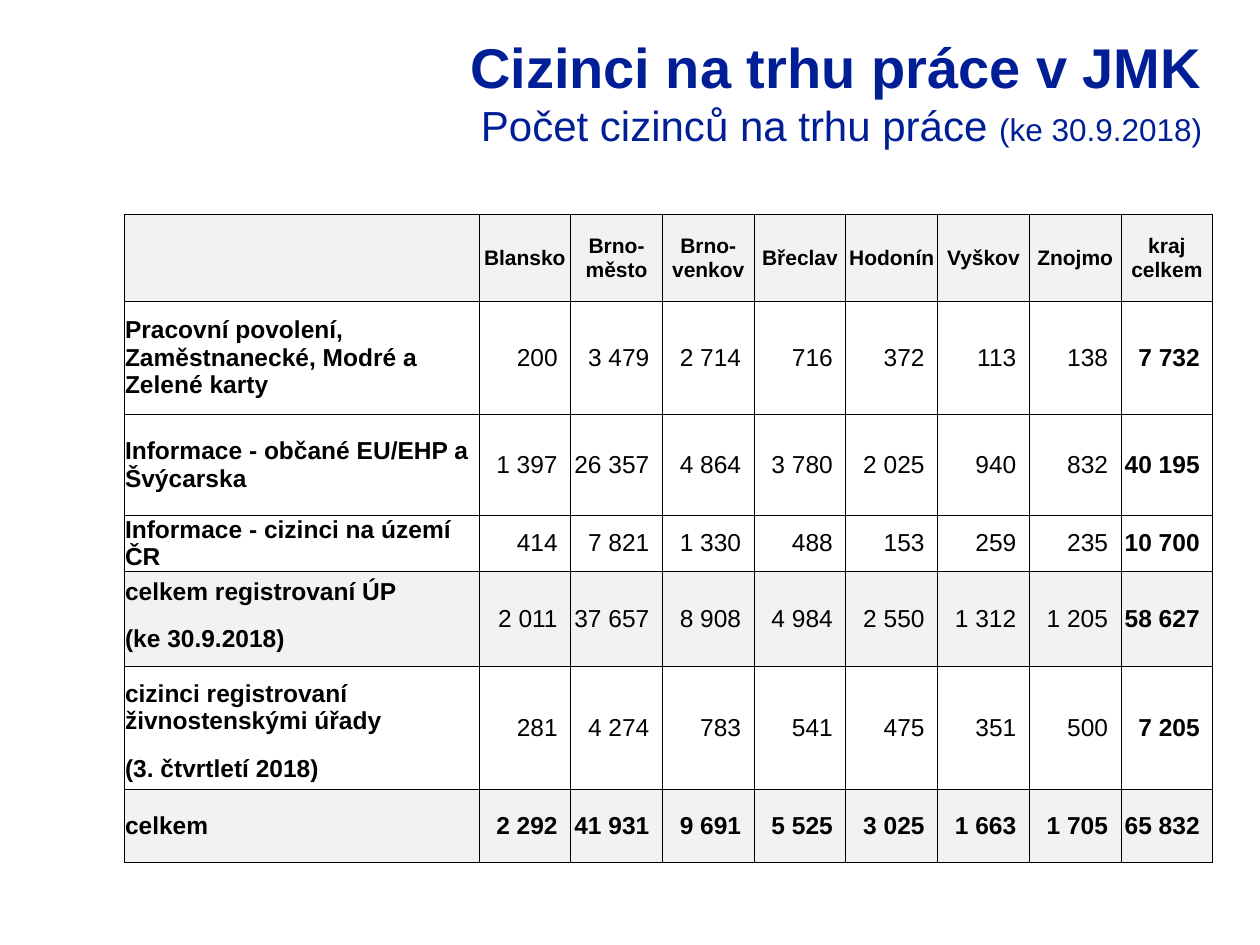
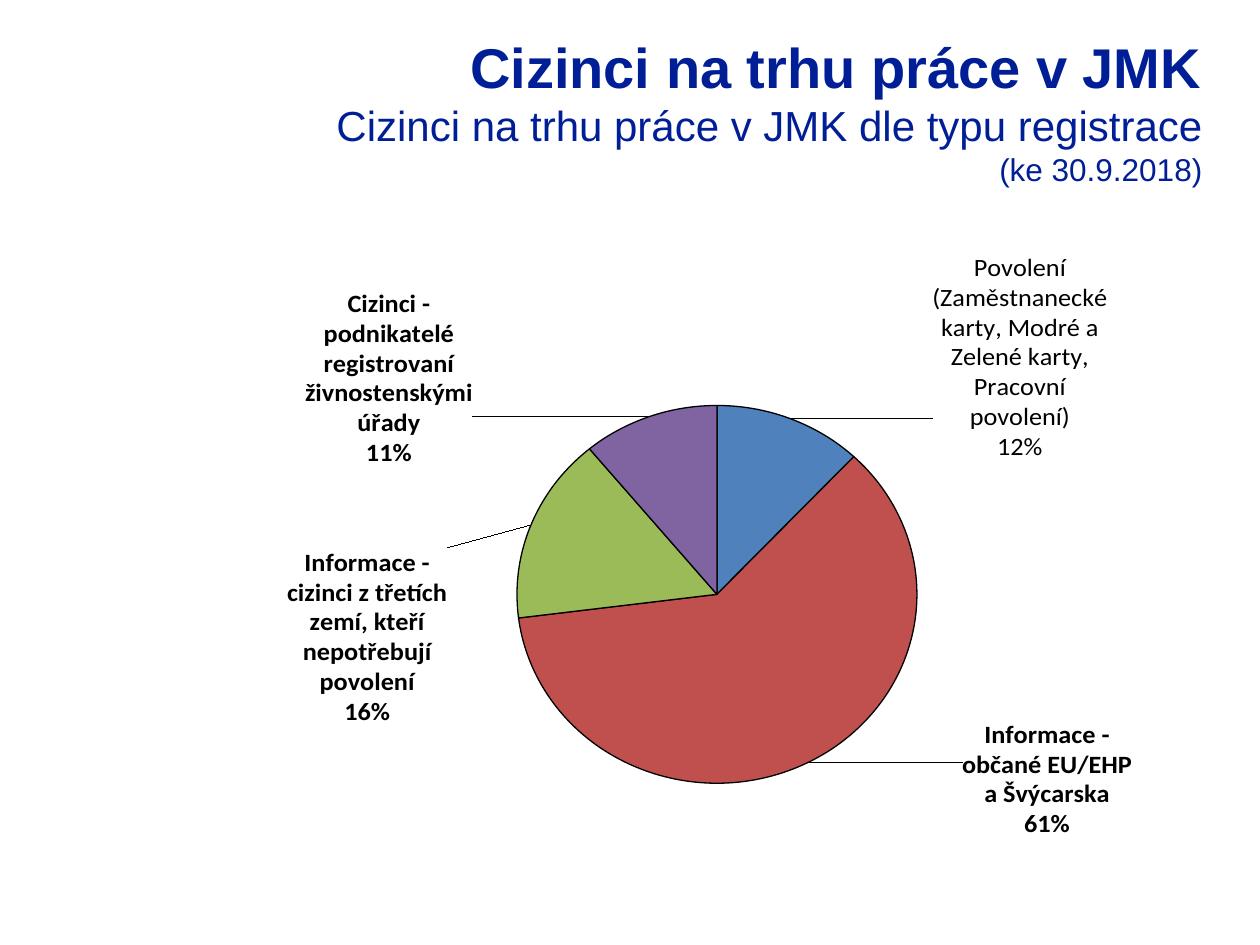
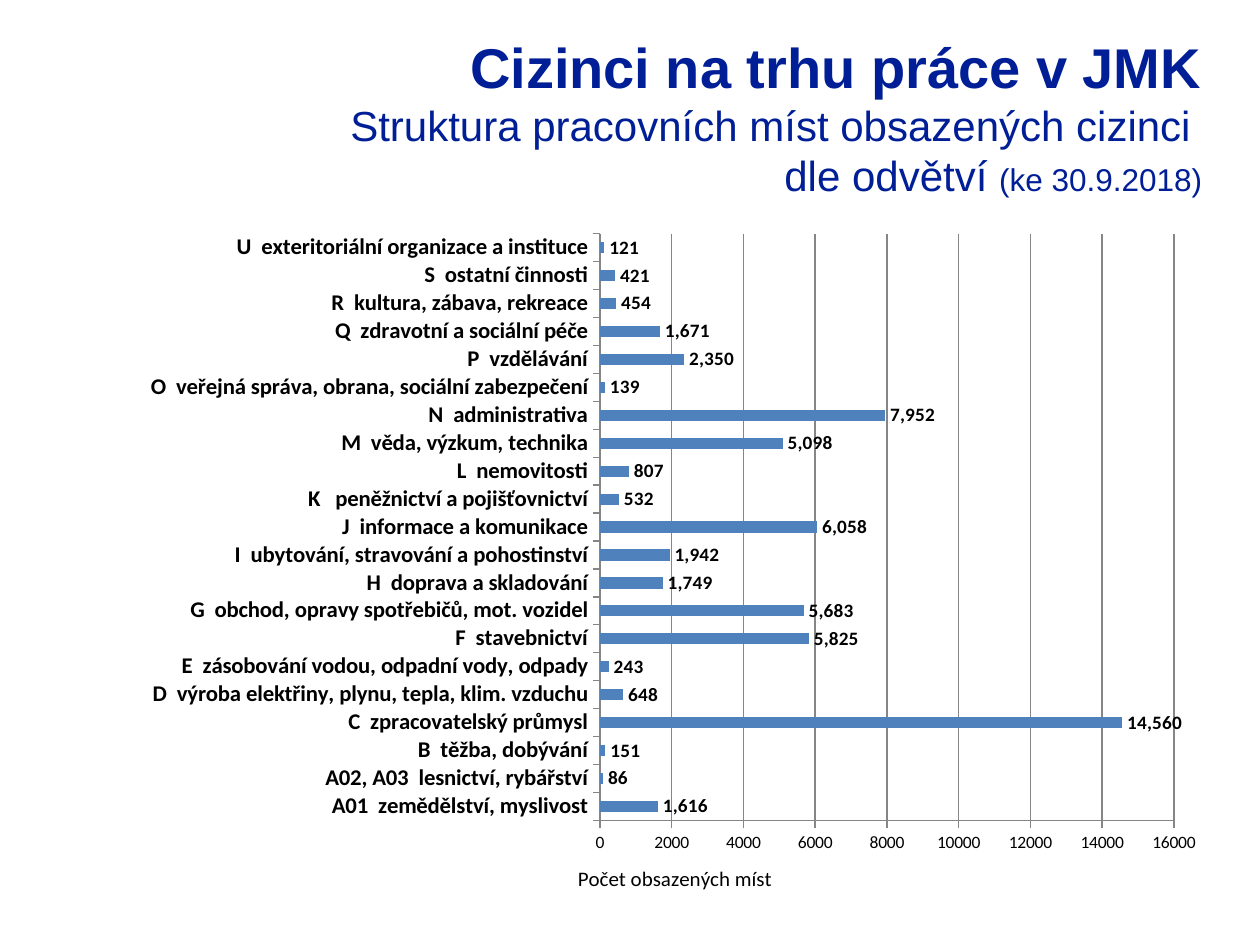
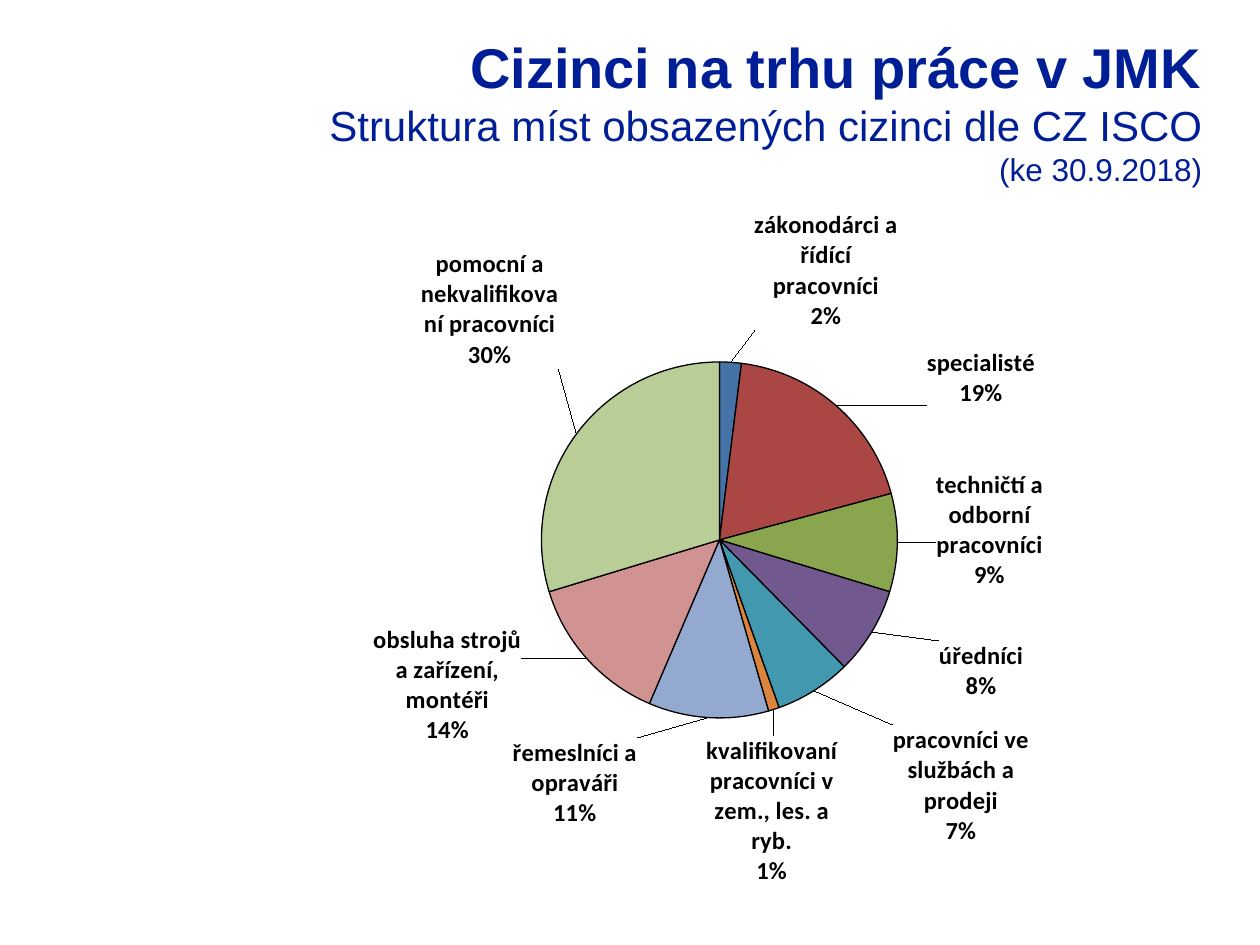
import copy

import lxml.etree
import pptx
import pptx.chart.data
import pptx.dml.color
import pptx.enum.chart
import pptx.enum.text
import pptx.oxml
import pptx.oxml.ns
import pptx.util

PX = 914400 / 126
PAGE_SIZE = (1260, 945)


class Theme:
    TITLE_FONT, CHART_FONT = "Arial", "Calibri"
    NAVY, BLACK, GRID = "001E96", "000000", "868686"
    SHADE, BAR = "F2F2F2", "4F81BD"
    HEADING, SUBTITLE, DATE = 32, 24, 18
    TABLE_HEAD, TABLE_BODY = 12, 14
    CHART, BAR_LABEL, CATEGORY, AXIS_TITLE = 10, 11, 13, 12
    REGISTRATION_LABEL, OCCUPATION_LABEL = 15, 14


HEADING = "Cizinci na trhu práce v JMK"
DATE = "(ke 30.9.2018)"
TITLE_BOX = (223, 26, 992, 189)
NARROW_TITLE_BOX = (302, 26, 913, 189)

TABLE_BOX = (124, 214, 1089, 647)
LABEL_WIDTH = 355
DISTRICTS = ["Blansko", "Brno-město", "Brno-venkov", "Břeclav", "Hodonín",
             "Vyškov", "Znojmo", "kraj celkem"]
HEAD_HEIGHT = 87
# label lines with their row heights, values, shaded, all bold
GROUPS = [
    ([("Pracovní povolení, Zaměstnanecké, Modré a Zelené karty", 113)],
     ["200", "3 479", "2 714", "716", "372", "113", "138", "7 732"], False, False),
    ([("Informace - občané EU/EHP a Švýcarska", 101)],
     ["1 397", "26 357", "4 864", "3 780", "2 025", "940", "832", "40 195"], False, False),
    ([("Informace - cizinci na území ČR", 55)],
     ["414", "7 821", "1 330", "488", "153", "259", "235", "10 700"], False, False),
    ([("celkem registrovaní ÚP", 40), ("(ke 30.9.2018)", 55)],
     ["2 011", "37 657", "8 908", "4 984", "2 550", "1 312", "1 205", "58 627"], True, False),
    ([("cizinci registrovaní živnostenskými úřady", 82), ("(3. čtvrtletí 2018)", 41)],
     ["281", "4 274", "783", "541", "475", "351", "500", "7 205"], False, False),
    ([("celkem", 73)],
     ["2 292", "41 931", "9 691", "5 525", "3 025", "1 663", "1 705", "65 832"], True, True),
]

# category, percent, colour, label shift from the slice edge, bold label
REGISTRATION = {
    "box": (233, 204, 942, 684),
    "plot": (247, 192, 474, 400),
    "label_size": Theme.REGISTRATION_LABEL,
    "slices": [
        ("Povolení (Zaměstnanecké karty, Modré a Zelené karty, Pracovní povolení)",
         12, "4F81BD", (139, 52), False),
        ("Informace - občané EU/EHP a Švýcarska", 61, "C0504D", (151, -52), True),
        ("Informace - cizinci z třetích zemí, kteří nepotřebují povolení",
         16, "9BBB59", (-77, 216), True),
        ("Cizinci - podnikatelé registrovaní živnostenskými úřady",
         11, "8064A2", (-174, 61), True),
    ],
}
OCCUPATIONS = {
    "box": (343, 155, 753, 755),
    "plot": (186, 207, 381, 356),
    "label_size": Theme.OCCUPATION_LABEL,
    "slices": [
        ("zákonodárci a řídící pracovníci", 2, "4572A7", (95, -24), True),
        ("specialisté", 19, "AA4643", (86, 8), True),
        ("techničtí a odborní pracovníci", 9, "89A54E", (31, -13), True),
        ("úředníci", 8, "71588F", (61, 5), True),
        ("pracovníci ve službách a prodeji", 7, "4198AF", (75, 28), True),
        ("kvalifikovaní pracovníci v zem., les. a ryb.", 1, "DB843D", (-70, 19), True),
        ("řemeslníci a opraváři", 11, "93A9CF", (-133, 13), True),
        ("obsluha strojů a zařízení, montéři", 14, "D19392", (-60, -39), True),
        ("pomocní a nekvalifikovaní pracovníci", 30, "B9CD96", (-12, -60), True),
    ],
}

SECTOR_BOX = (123, 214, 1090, 684)
SECTOR_PLOT = (477, 20, 574, 596)
SECTOR_AXIS_TITLE = "Počet obsazených míst"
SECTOR_AXIS_TITLE_AT = (451, 657)
SECTORS = [
    ("A01", "zemědělství, myslivost", 1616),
    ("A02, A03", "lesnictví, rybářství", 86),
    ("B", "těžba, dobývání", 151),
    ("C", "zpracovatelský průmysl", 14560),
    ("D", "výroba elektřiny, plynu, tepla, klim. vzduchu", 648),
    ("E", "zásobování vodou, odpadní vody, odpady", 243),
    ("F", "stavebnictví", 5825),
    ("G", "obchod, opravy spotřebičů, mot. vozidel", 5683),
    ("H", "doprava a skladování", 1749),
    ("I", "ubytování, stravování a pohostinství", 1942),
    ("J", "informace a komunikace", 6058),
    ("K ", "peněžnictví a pojišťovnictví", 532),
    ("L", "nemovitosti", 807),
    ("M", "věda, výzkum, technika", 5098),
    ("N", "administrativa", 7952),
    ("O", "veřejná správa, obrana, sociální zabezpečení", 139),
    ("P", "vzdělávání", 2350),
    ("Q", "zdravotní a sociální péče", 1671),
    ("R", "kultura, zábava, rekreace", 454),
    ("S", "ostatní činnosti", 421),
    ("U", "exteritoriální organizace a instituce", 121),
]


def px(length):
    return pptx.util.Emu(round(length * PX))


def rgb(colour):
    return pptx.dml.color.RGBColor.from_string(colour)


def style_font(font, size, colour=Theme.BLACK, bold=False, name=Theme.CHART_FONT):
    font.size, font.bold, font.name = pptx.util.Pt(size), bold, name
    font.color.rgb = rgb(colour)


def style_line(line, colour):
    line.color.rgb = rgb(colour)
    line.width = pptx.util.Pt(0.75)


def child(parent, tag, **attributes):
    node = lxml.etree.SubElement(parent, pptx.oxml.ns.qn(tag))
    for name, value in attributes.items():
        node.set(name, str(value))
    return node


def new_element(tag):
    prefix = tag.split(":")[0]
    return pptx.oxml.parse_xml(f"<{tag} {pptx.oxml.ns.nsdecls(prefix)}/>")


def manual_layout(chart_box, lengths, **modes):
    """Turn px lengths (x, y and perhaps w, h) into shares of the chart box."""
    layout = new_element("c:layout")
    manual = child(layout, "c:manualLayout")
    for name, value in modes.items():
        child(manual, f"c:{name}", val=value)
    for name, length, whole in zip("xywh", lengths, chart_box[2:] * 2):
        child(manual, f"c:{name}", val=round(length / whole, 4))
    return layout


def add_page(deck, subtitle_lines, box=TITLE_BOX, date_below=False):
    page = deck.slides.add_slide(deck.slide_layouts[5])
    title = page.shapes.title
    title.left, title.top, title.width, title.height = map(px, box)
    frame = title.text_frame
    frame.auto_size = pptx.enum.text.MSO_AUTO_SIZE.NONE
    frame.vertical_anchor = pptx.enum.text.MSO_ANCHOR.TOP
    frame.margin_top = px(6)
    para = frame.paragraphs[0]
    para.alignment = pptx.enum.text.PP_ALIGN.RIGHT

    def add_span(text, size, bold=False):
        span = para.add_run()
        span.text = text
        style_font(span.font, size, Theme.NAVY, bold, Theme.TITLE_FONT)

    add_span(HEADING, Theme.HEADING, True)
    for line in subtitle_lines:
        para.add_line_break()
        add_span(line, Theme.SUBTITLE)
    if date_below:
        para.add_line_break()
    add_span(DATE, Theme.DATE)
    return page


def set_borders(cell, sides):
    properties = cell._tc.get_or_add_tcPr()
    for position, side in enumerate("LRTB"):
        line = new_element(f"a:ln{side}")
        line.set("w", str(pptx.util.Pt(0.5)))
        if side in sides:
            child(child(line, "a:solidFill"), "a:srgbClr", val=Theme.BLACK)
        else:
            child(line, "a:noFill")
        properties.insert(position, line)


def fill_cell(cell, text, align, size, bold, shaded, right_margin=1, sides="LRTB"):
    if shaded:
        cell.fill.solid()
        cell.fill.fore_color.rgb = rgb(Theme.SHADE)
    else:
        cell.fill.background()
    set_borders(cell, sides)
    cell.margin_left = cell.margin_top = px(1)
    cell.margin_right, cell.margin_bottom = px(right_margin), 0
    cell.vertical_anchor = pptx.enum.text.MSO_ANCHOR.MIDDLE
    para = cell.text_frame.paragraphs[0]
    para.text = text
    para.alignment = align
    style_font(para.font, size, bold=bold, name=Theme.TITLE_FONT)


def add_worker_table(page):
    align = pptx.enum.text.PP_ALIGN
    heights = [HEAD_HEIGHT] + [height for group in GROUPS for _, height in group[0]]
    table = page.shapes.add_table(len(heights), len(DISTRICTS) + 1,
                                  *map(px, TABLE_BOX)).table
    table.first_row = table.horz_banding = False
    for row, height in zip(table.rows, heights):
        row.height = px(height)
    value_width = (TABLE_BOX[2] - LABEL_WIDTH) / len(DISTRICTS)
    for number, column in enumerate(table.columns):
        column.width = px(value_width if number else LABEL_WIDTH)
    for number, name in enumerate([""] + DISTRICTS):
        fill_cell(table.cell(0, number), name, align.CENTER, Theme.TABLE_HEAD, True, True)

    top = 1
    for labels, values, shaded, all_bold in GROUPS:
        last = len(labels) - 1
        for offset, (label, _) in enumerate(labels):
            sides = "LR" + "T" * (offset == 0) + "B" * (offset == last)
            fill_cell(table.cell(top + offset, 0), label, align.LEFT,
                      Theme.TABLE_BODY, True, shaded, sides=sides)
            for number, value in enumerate(values, 1):
                bold = all_bold or number == len(values)
                fill_cell(table.cell(top + offset, number), "" if offset else value,
                          align.RIGHT, Theme.TABLE_BODY, bold, shaded, right_margin=13)
        if last:
            for number in range(1, len(values) + 1):
                table.cell(top, number).merge(table.cell(top + last, number))
        top += len(labels)


def add_chart(page, kind, box, plot_area, categories, values):
    chart_data = pptx.chart.data.CategoryChartData()
    chart_data.categories = categories
    chart_data.add_series("Series 1", values)
    chart = page.shapes.add_chart(kind, *map(px, box), chart_data).chart
    chart.has_title = chart.has_legend = False
    style_font(chart.font, Theme.CHART)
    area = chart._chartSpace.chart.plotArea
    for old in area.findall(pptx.oxml.ns.qn("c:layout")):
        area.remove(old)
    area.insert(0, manual_layout(box, plot_area, layoutTarget="inner",
                                 xMode="edge", yMode="edge"))
    return chart


def place_pie_labels(series, pie):
    """Give every slice its own label, moved from its usual place by the shift."""
    labels = series.data_labels
    labels.show_percentage = labels.show_category_name = True
    labels.show_value = False
    labels.position = pptx.enum.chart.XL_LABEL_POSITION.BEST_FIT
    style_font(labels.font, pie["label_size"], bold=True)
    shared = labels._element
    separator = new_element("c:separator")
    separator.text = "\n"
    shared.find(pptx.oxml.ns.qn("c:showBubbleSize")).addnext(separator)
    leader_tag = pptx.oxml.ns.qn("c:showLeaderLines")
    if shared.find(leader_tag) is None:
        child(shared, "c:showLeaderLines")
    shared.find(leader_tag).set("val", "1")
    parts = [part for part in shared if part.tag != leader_tag]
    for number, (_, _, _, shift, bold) in enumerate(pie["slices"]):
        label = new_element("c:dLbl")
        child(label, "c:idx", val=number)
        label.append(manual_layout(pie["box"], shift))
        for part in parts:
            label.append(copy.deepcopy(part))
        for run_properties in label.iter(pptx.oxml.ns.qn("a:defRPr")):
            run_properties.set("b", str(int(bold)))
        shared.insert(number, label)


def add_pie(page, pie):
    names, values, colours, _, _ = zip(*pie["slices"])
    chart = add_chart(page, pptx.enum.chart.XL_CHART_TYPE.PIE, pie["box"],
                      pie["plot"], names, values)
    chart.plots[0].vary_by_categories = True
    series = chart.plots[0].series[0]
    for number, colour in enumerate(colours):
        point = series.points[number].format
        point.fill.solid()
        point.fill.fore_color.rgb = rgb(colour)
        style_line(point.line, Theme.BLACK)
    place_pie_labels(series, pie)


def add_sector_bars(page):
    names = [f"{code}  {name}" for code, name, _ in SECTORS]
    chart = add_chart(page, pptx.enum.chart.XL_CHART_TYPE.BAR_CLUSTERED, SECTOR_BOX,
                      SECTOR_PLOT, names, [count for _, _, count in SECTORS])
    plot = chart.plots[0]
    plot.gap_width, plot.vary_by_categories = 150, False
    series = plot.series[0]
    series.format.fill.solid()
    series.format.fill.fore_color.rgb = rgb(Theme.BAR)
    labels = series.data_labels
    labels.show_value = True
    labels.number_format, labels.number_format_is_linked = "#,##0", False
    labels.position = pptx.enum.chart.XL_LABEL_POSITION.OUTSIDE_END
    style_font(labels.font, Theme.BAR_LABEL, bold=True)

    category_axis, value_axis = chart.category_axis, chart.value_axis
    for axis in (category_axis, value_axis):
        axis.major_tick_mark = pptx.enum.chart.XL_TICK_MARK.OUTSIDE
        style_line(axis.format.line, Theme.GRID)
    style_font(category_axis.tick_labels.font, Theme.CATEGORY, bold=True)
    style_font(value_axis.tick_labels.font, Theme.CHART)
    value_axis.tick_labels.number_format = "0"
    value_axis.tick_labels.number_format_is_linked = False
    value_axis.minimum_scale, value_axis.maximum_scale = 0, 16000
    value_axis.major_unit = 2000
    value_axis.has_major_gridlines = True
    style_line(value_axis.major_gridlines.format.line, Theme.GRID)

    title = value_axis.axis_title
    para = title.text_frame.paragraphs[0]
    para.text = SECTOR_AXIS_TITLE
    style_font(para.font, Theme.AXIS_TITLE)
    for old in title._element.findall(pptx.oxml.ns.qn("c:layout")):
        title._element.remove(old)
    title._element.find(pptx.oxml.ns.qn("c:tx")).addnext(
        manual_layout(SECTOR_BOX, SECTOR_AXIS_TITLE_AT, xMode="edge", yMode="edge"))


def main():
    deck = pptx.Presentation()
    deck.slide_width, deck.slide_height = map(px, PAGE_SIZE)
    add_worker_table(add_page(deck, ["Počet cizinců na trhu práce "]))
    add_pie(add_page(deck, ["Cizinci na trhu práce v JMK dle typu registrace "],
                     NARROW_TITLE_BOX), REGISTRATION)
    add_sector_bars(add_page(deck, ["Struktura pracovních míst obsazených cizinci ",
                                    "dle odvětví "]))
    add_pie(add_page(deck, ["Struktura míst obsazených cizinci dle CZ ISCO"],
                     date_below=True), OCCUPATIONS)
    deck.save("out.pptx")


if __name__ == "__main__":
    main()
